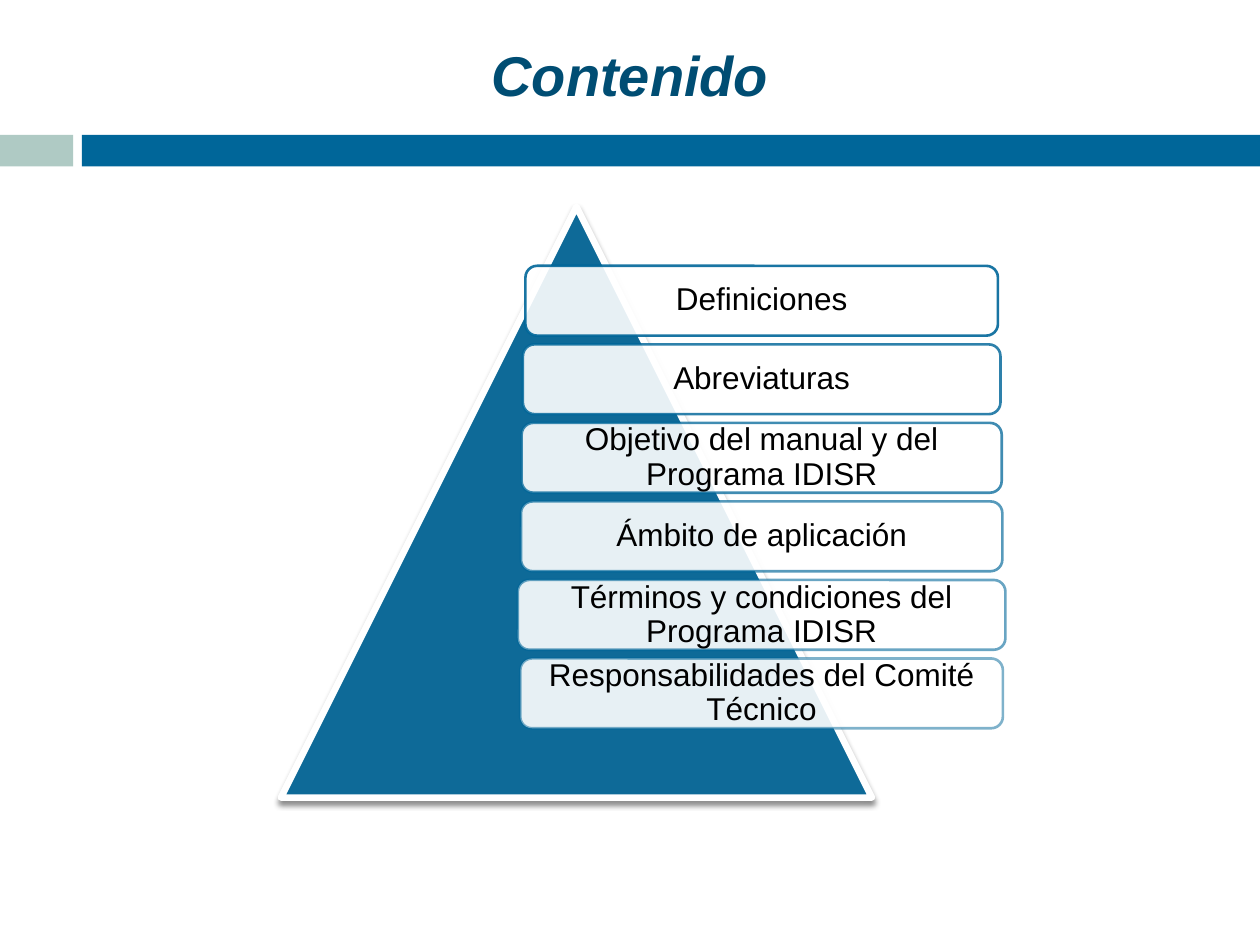
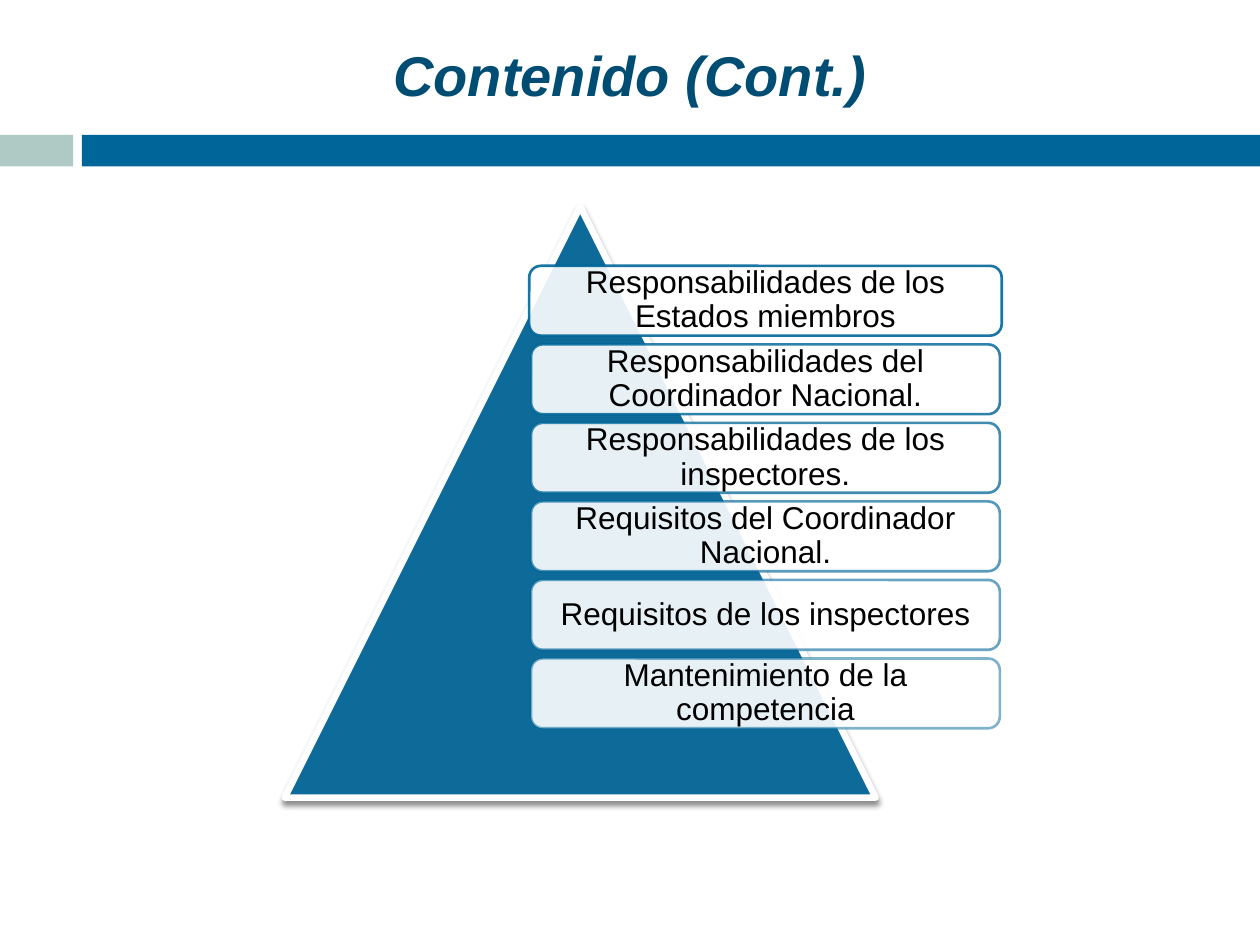
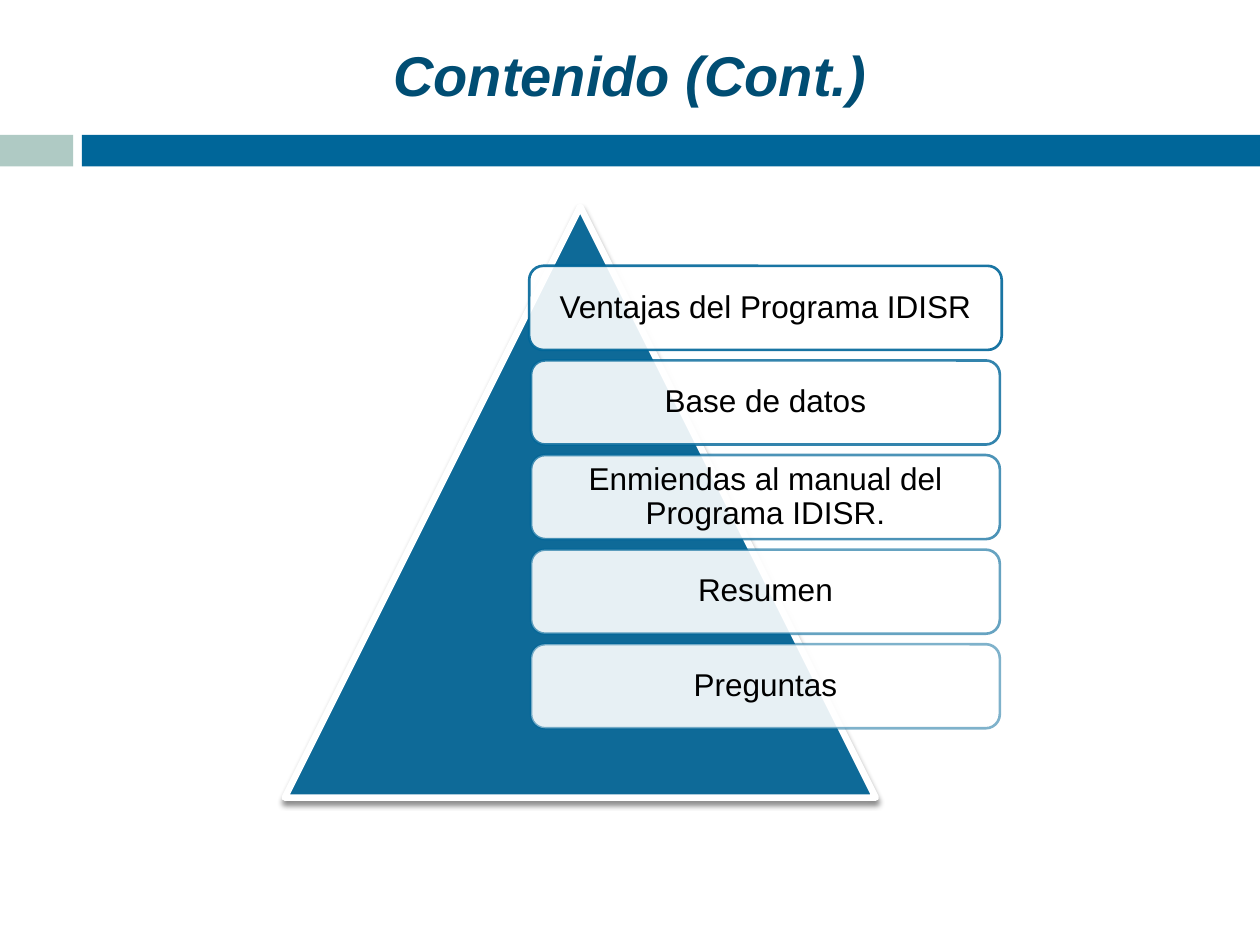
from dataclasses import dataclass

from lxml.etree import SubElement
from pptx import Presentation
from pptx.dml.color import RGBColor
from pptx.enum.shapes import MSO_SHAPE
from pptx.enum.text import MSO_ANCHOR, PP_ALIGN
from pptx.oxml.ns import qn
from pptx.shapes.autoshape import Shape
from pptx.slide import Slide
from pptx.util import Emu, Inches, Pt

# The slide is a grid of 100 columns by 75 rows of square cells
SLIDE_WIDTH, SLIDE_HEIGHT = Inches(10), Inches(7.5)
COLUMNS = 100
CELL = SLIDE_WIDTH / COLUMNS

BLUE = RGBColor(0x00, 0x66, 0x99)
DARK_BLUE = RGBColor(0x00, 0x4D, 0x73)
SAGE = RGBColor(0xAF, 0xCA, 0xC4)
WHITE = RGBColor(0xFF, 0xFF, 0xFF)
BLACK = RGBColor(0x00, 0x00, 0x00)

TITLE_FONT = {"name": "Arial", "size": Pt(32), "bold": True, "italic": True}
TOPIC_FONT = {"name": "Arial", "size": Pt(18)}

# Pyramid and topic list
PYRAMID_TOP, PYRAMID_SIZE = 16.4, 46.9
TOPICS_TOP, TOPICS_HEIGHT = 21.1, 36.7
TOPICS_OFFSET = 14.7  # from the pyramid's axis to the axis of the topics
GAP_SHARE = 1 / 8  # gap between topics, as a share of a topic's height
FILL_OPACITY = 90
FIRST_LINE_OPACITY, LAST_LINE_OPACITY = 90, 50


@dataclass(frozen=True)
class Area:
    """A rectangle in grid cells."""
    left: float
    top: float
    width: float
    height: float

    def box(self) -> list[Emu]:
        return [Emu(round(cells * CELL)) for cells in
                (self.left, self.top, self.width, self.height)]


@dataclass(frozen=True)
class Topic:
    text: str
    width: float = 37.2


@dataclass(frozen=True)
class ContentSlide:
    title: str
    axis: float
    topics: tuple[Topic, ...]


TITLE_AREA = Area(5.4, 2.5, 89.2, 6.7)
BANDS = ((Area(0, 10.7, 5.8, 2.5), SAGE), (Area(6.5, 10.7, 93.5, 2.5), BLUE))

CONTENT_SLIDES = (
    ContentSlide("Contenido", 45.75, (
        Topic("Definiciones", 37.5),
        Topic("Abreviaturas", 37.9),
        Topic("Objetivo del manual y del Programa IDISR", 38.1),
        Topic("Ámbito de aplicación", 38.2),
        Topic("Términos y condiciones del Programa IDISR", 38.7),
        Topic("Responsabilidades del Comité Técnico", 38.3),
    )),
    ContentSlide("Contenido (Cont.)", 46.05, (
        Topic("Responsabilidades de los Estados miembros", 37.5),
        Topic("Responsabilidades del Coordinador Nacional."),
        Topic("Responsabilidades de los inspectores."),
        Topic("Requisitos del Coordinador Nacional."),
        Topic("Requisitos de los inspectores"),
        Topic("Mantenimiento de la competencia"),
    )),
    ContentSlide("Contenido (Cont.)", 46.05, (
        Topic("Ventajas del Programa IDISR", 37.5),
        Topic("Base de datos"),
        Topic("Enmiendas al manual del Programa IDISR."),
        Topic("Resumen"),
        Topic("Preguntas"),
    )),
)


def add_solid(slide: Slide, kind: MSO_SHAPE, area: Area, fill: RGBColor,
              line: RGBColor | None = None, line_width: float = 0) -> Shape:
    shape = slide.shapes.add_shape(kind, *area.box())
    shape.shadow.inherit = False
    shape.fill.solid()
    shape.fill.fore_color.rgb = fill
    if line is None:
        shape.line.fill.background()
    else:
        shape.line.color.rgb = line
        shape.line.width = Pt(line_width)
    return shape


def set_opacity(shape: Shape, *percents: float) -> None:
    """Set the opacity of the fill and, if given, of the line."""
    colors = shape.element.spPr.iter(qn("a:srgbClr"))
    for color, percent in zip(colors, percents):
        SubElement(color, qn("a:alpha"), val=str(round(percent * 1000)))


def add_shadow(shape: Shape) -> None:
    effects = shape.element.spPr.find(qn("a:effectLst"))
    shadow = SubElement(effects, qn("a:outerShdw"), blurRad=str(Pt(3)),
                        dist=str(Pt(2.4)), dir="5400000", rotWithShape="0")
    color = SubElement(shadow, qn("a:srgbClr"), val=str(BLACK))
    SubElement(color, qn("a:alpha"), val="45000")


def write(shape: Shape, text: str, font: dict, color: RGBColor,
          margin: float, line_spacing: float = 1.0) -> None:
    frame = shape.text_frame
    frame.word_wrap = True
    frame.vertical_anchor = MSO_ANCHOR.MIDDLE
    for side in ("left", "top", "right", "bottom"):
        setattr(frame, f"margin_{side}", Inches(margin))
    paragraph = frame.paragraphs[0]
    paragraph.alignment = PP_ALIGN.CENTER
    paragraph.line_spacing = line_spacing
    run = paragraph.add_run()
    run.text = text
    for name, value in font.items():
        setattr(run.font, name, value)
    run.font.color.rgb = color


def add_header(slide: Slide, title: str) -> None:
    for area, color in BANDS:
        add_solid(slide, MSO_SHAPE.RECTANGLE, area, color)
    title_box = slide.shapes.add_textbox(*TITLE_AREA.box())
    write(title_box, title, TITLE_FONT, DARK_BLUE, margin=0.05)


def add_pyramid(slide: Slide, axis: float) -> None:
    area = Area(axis - PYRAMID_SIZE / 2, PYRAMID_TOP, PYRAMID_SIZE, PYRAMID_SIZE)
    pyramid = add_solid(slide, MSO_SHAPE.ISOSCELES_TRIANGLE, area, BLUE, WHITE, 3.75)
    set_opacity(pyramid, FILL_OPACITY)
    add_shadow(pyramid)


def add_topics(slide: Slide, axis: float, topics: tuple[Topic, ...]) -> None:
    gaps = len(topics) - 1
    height = TOPICS_HEIGHT / (len(topics) + gaps * GAP_SHARE)
    fade = (FIRST_LINE_OPACITY - LAST_LINE_OPACITY) / gaps
    for index, topic in enumerate(topics):
        area = Area(axis - topic.width / 2,
                    TOPICS_TOP + index * height * (1 + GAP_SHARE),
                    topic.width, height)
        box = add_solid(slide, MSO_SHAPE.ROUNDED_RECTANGLE, area, WHITE, BLUE, 1.5)
        set_opacity(box, FILL_OPACITY, FIRST_LINE_OPACITY - index * fade)
        write(box, topic.text, TOPIC_FONT, BLACK, margin=0.04, line_spacing=0.9)


def main() -> None:
    presentation = Presentation()
    presentation.slide_width = SLIDE_WIDTH
    presentation.slide_height = SLIDE_HEIGHT
    blank_layout = presentation.slide_layouts[6]
    for content in CONTENT_SLIDES:
        slide = presentation.slides.add_slide(blank_layout)
        add_header(slide, content.title)
        add_pyramid(slide, content.axis)
        add_topics(slide, content.axis + TOPICS_OFFSET, content.topics)
    presentation.save("out.pptx")


if __name__ == "__main__":
    main()
